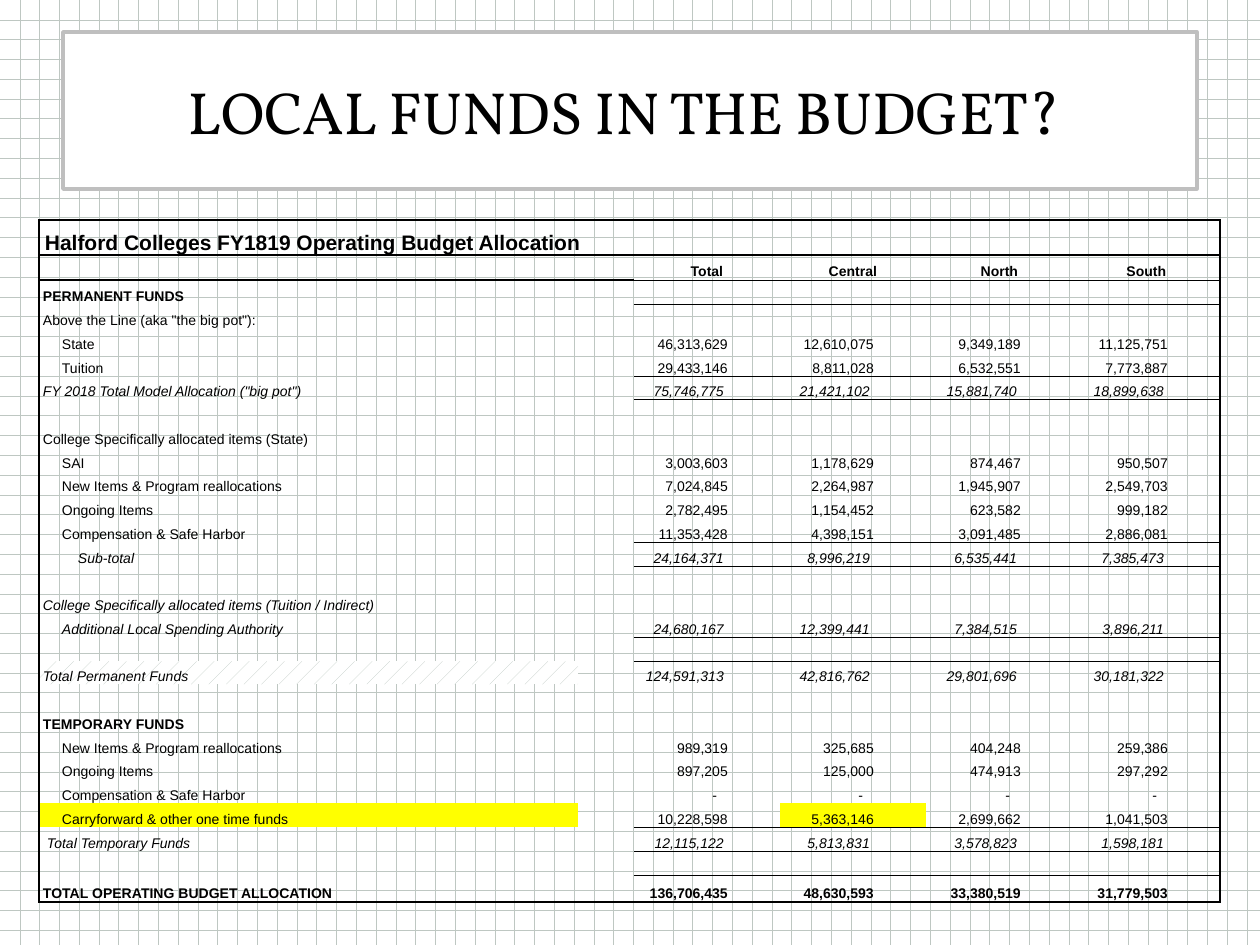
from dataclasses import dataclass

from lxml import etree
from pptx import Presentation
from pptx.dml.color import RGBColor
from pptx.enum.dml import MSO_PATTERN
from pptx.enum.shapes import MSO_SHAPE
from pptx.enum.text import MSO_ANCHOR, PP_ALIGN
from pptx.oxml.ns import qn
from pptx.util import Pt

PIXEL = 914400 / 126
RECTANGLE = MSO_SHAPE.RECTANGLE
DOTTED_GRID = MSO_PATTERN.DOTTED_GRID
PERCENT_5 = MSO_PATTERN.PERCENT_5
MIDDLE, BOTTOM = MSO_ANCHOR.MIDDLE, MSO_ANCHOR.BOTTOM
LEFT, CENTER, RIGHT = PP_ALIGN.LEFT, PP_ALIGN.CENTER, PP_ALIGN.RIGHT
NO_STYLE = "{2D5ABB26-0587-4C30-8999-92F81FD0307C}"


@dataclass(frozen=True)
class Theme:
    """Colours, fonts and type sizes of the slide."""
    ink: str = "000000"
    paper: str = "FFFFFF"
    grid: str = "BEC7C2"
    frame: str = "BFBFBF"
    highlight: str = "FFFF00"
    title_font: str = "Vollkorn"
    table_font: str = "Arial"
    title_size: int = 34
    heading_size: int = 12
    body_size: int = 8
    frame_width: int = 2
    outer_rule: float = 1
    inner_rule: float = 0.5


THEME = Theme()
PLAIN, BOLD, ITALIC = "plain", "bold", "italic"
EMPTY = ("", 0, PLAIN, "")
HEADING = "Halford Colleges FY1819 Operating Budget Allocation"
CAMPUSES = "Total Central North South"
BUDGET = [
    (HEADING, 6, BOLD, ""),
    ("", 0, BOLD, CAMPUSES),
    ("PERMANENT FUNDS", 4, BOLD, ""),
    ('Above the Line (aka "the big pot"):', 4, PLAIN, ""),
    ("State", 23, PLAIN, "46,313,629 12,610,075 9,349,189 11,125,751"),
    ("Tuition", 23, PLAIN, "29,433,146 8,811,028 6,532,551 7,773,887"),
    ('FY 2018 Total Model Allocation ("big pot")', 4, ITALIC, "75,746,775 21,421,102 15,881,740 18,899,638"),
    EMPTY,
    ("College Specifically allocated items (State)", 4, PLAIN, ""),
    ("SAI", 23, PLAIN, "3,003,603 1,178,629 874,467 950,507"),
    ("New Items & Program reallocations", 23, PLAIN, "7,024,845 2,264,987 1,945,907 2,549,703"),
    ("Ongoing Items", 23, PLAIN, "2,782,495 1,154,452 623,582 999,182"),
    ("Compensation & Safe Harbor", 23, PLAIN, "11,353,428 4,398,151 3,091,485 2,886,081"),
    ("Sub-total", 39, ITALIC, "24,164,371 8,996,219 6,535,441 7,385,473"),
    EMPTY,
    ("College Specifically allocated items (Tuition / Indirect)", 4, ITALIC, ""),
    ("Additional Local Spending Authority", 23, ITALIC, "24,680,167 12,399,441 7,384,515 3,896,211"),
    EMPTY,
    ("Total Permanent Funds", 4, ITALIC, "124,591,313 42,816,762 29,801,696 30,181,322"),
    EMPTY,
    ("TEMPORARY FUNDS", 4, BOLD, ""),
    ("New Items & Program reallocations", 23, PLAIN, "989,319 325,685 404,248 259,386"),
    ("Ongoing Items", 23, PLAIN, "897,205 125,000 474,913 297,292"),
    ("Compensation & Safe Harbor", 23, PLAIN, "- - - -"),
    ("Carryforward & other one time funds", 23, PLAIN, "10,228,598 5,363,146 2,699,662 1,041,503"),
    ("Total Temporary Funds", 8, ITALIC, "12,115,122 5,813,831 3,578,823 1,598,181"),
    EMPTY,
    ("TOTAL OPERATING BUDGET ALLOCATION", 4, BOLD, "136,706,435 48,630,593 33,380,519 31,779,503"),
]
COLUMN_WIDTHS = [539, 56, 146, 146, 147, 147]
ROW_HEIGHTS = [35, 25, 25] + [24] * 24 + [27]
ROW_HEIGHTS[6:23:4] = [23] * 5
RULED_ROWS = {1, 5, 12, 16, 24, 26}
HIGHLIGHTED = {(24, 0), (24, 3)}
PATTERNED = {(18, 0)}
FIRST_AMOUNT = 2
LAST_ROW, LAST_COLUMN = len(BUDGET) - 1, len(COLUMN_WIDTHS) - 1


def px(length):
    """Turn pixels into EMU."""
    return round(length * PIXEL)


def rgb(color):
    """Turn a hex string into a colour."""
    return RGBColor.from_string(color)


def set_pattern(fill, pattern):
    """Give a fill the grey and white pattern."""
    fill.patterned()
    fill.pattern = pattern
    fill.fore_color.rgb = rgb(THEME.grid)
    fill.back_color.rgb = rgb(THEME.paper)


def add_run(paragraph, text, font, size, style=PLAIN):
    """Add one styled run to a paragraph."""
    run = paragraph.add_run()
    run.text = text
    run.font.name = font
    run.font.size = Pt(size)
    run.font.bold = style == BOLD
    run.font.italic = style == ITALIC
    run.font.color.rgb = rgb(THEME.ink)


def add_title(slide, left, top, width, height):
    """Draw the framed title in its box."""
    shape = slide.shapes.add_shape(RECTANGLE, px(left), px(top), px(width), px(height))
    shape.shadow.inherit = False
    shape.fill.solid()
    shape.fill.fore_color.rgb = rgb(THEME.paper)
    shape.line.color.rgb = rgb(THEME.frame)
    shape.line.width = Pt(THEME.frame_width)
    shape.text_frame.vertical_anchor = MIDDLE
    paragraph = shape.text_frame.paragraphs[0]
    paragraph.alignment = CENTER
    add_run(paragraph, "LOCAL FUNDS IN THE BUDGET? ", THEME.title_font, THEME.title_size)


def write_cell(cell, text, size, style, alignment=LEFT, left=0, right=0):
    """Set the insets and the text of a cell."""
    cell.margin_left, cell.margin_right = px(left), px(right)
    cell.margin_top = cell.margin_bottom = 0
    cell.vertical_anchor = BOTTOM
    paragraph = cell.text_frame.paragraphs[0]
    paragraph.alignment = alignment
    if text:
        add_run(paragraph, text, THEME.table_font, size, style)
    else:
        etree.SubElement(paragraph._p, qn("a:endParaRPr"), sz=str(size * 100))


def fill_cell(cell, position):
    """Highlight, pattern or clear the cell at a position."""
    if position in HIGHLIGHTED:
        cell.fill.solid()
        cell.fill.fore_color.rgb = rgb(THEME.highlight)
    elif position in PATTERNED:
        set_pattern(cell.fill, PERCENT_5)
    else:
        cell.fill.background()


def cell_rules(row, column):
    """Return the border widths of a cell by side."""
    rules = {}
    amount = column >= FIRST_AMOUNT
    if column == 0:
        rules["L"] = THEME.outer_rule
    if column == LAST_COLUMN:
        rules["R"] = THEME.outer_rule
    if row in (0, 1):
        rules["T"] = THEME.outer_rule
    elif amount and row - 1 in RULED_ROWS:
        rules["T"] = THEME.inner_rule
    if row in (0, LAST_ROW):
        rules["B"] = THEME.outer_rule
    elif amount and row in RULED_ROWS:
        rules["B"] = THEME.inner_rule
    return rules


def draw_borders(cell, rules):
    """Add border lines ahead of the fill of a cell."""
    properties = cell._tc.get_or_add_tcPr()
    for index, (side, width) in enumerate(rules.items()):
        line = etree.Element(qn(f"a:ln{side}"), w=str(Pt(width)))
        solid = etree.SubElement(line, qn("a:solidFill"))
        etree.SubElement(solid, qn("a:srgbClr"), val=THEME.ink)
        properties.insert(index, line)


def write_row(table, row, label, indent, style, amounts):
    """Write the label and the amounts of one budget row."""
    texts = [label, ""] + (amounts.split() or [""] * 4)
    for column, text in enumerate(texts):
        cell = table.cell(row, column)
        size = THEME.heading_size if text == HEADING else THEME.body_size
        if column < FIRST_AMOUNT:
            write_cell(cell, text, size, style, left=indent)
        elif row == 1:
            write_cell(cell, text, size, style, CENTER)
        else:
            inset = 63 if text == "-" else 56 if style == ITALIC else 52
            write_cell(cell, text, size, style, RIGHT, right=inset)
        fill_cell(cell, (row, column))
        draw_borders(cell, cell_rules(row, column))


def add_budget_table(slide, left, top):
    """Draw the budget table from its top left corner."""
    frame = slide.shapes.add_table(
        len(BUDGET), len(COLUMN_WIDTHS), px(left), px(top), px(sum(COLUMN_WIDTHS)), px(sum(ROW_HEIGHTS)))
    table = frame.table
    table.first_row = table.horz_banding = False
    table._tbl.tblPr.find(qn("a:tableStyleId")).text = NO_STYLE
    for column, width in zip(table.columns, COLUMN_WIDTHS):
        column.width = px(width)
    for row, height in zip(table.rows, ROW_HEIGHTS):
        row.height = px(height)
    for index, entry in enumerate(BUDGET):
        write_row(table, index, *entry)
    table.cell(0, 0).merge(table.cell(0, 3))


def main():
    """Build the slide and save it."""
    presentation = Presentation()
    presentation.slide_width, presentation.slide_height = px(1260), px(945)
    slide = presentation.slides.add_slide(presentation.slide_layouts[6])
    set_pattern(slide.background.fill, DOTTED_GRID)
    add_title(slide, 63, 32, 1134, 157)
    add_budget_table(slide, 39, 220)
    presentation.save("out.pptx")


if __name__ == "__main__":
    main()
